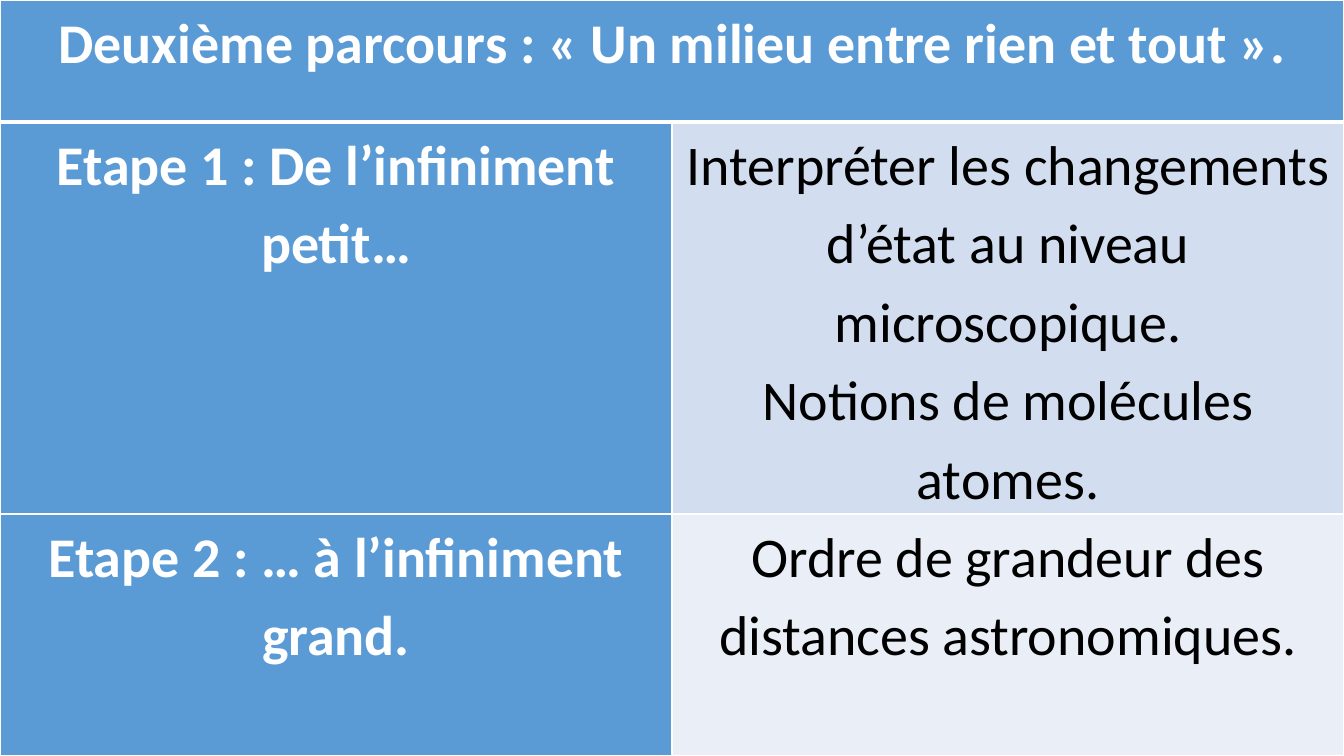
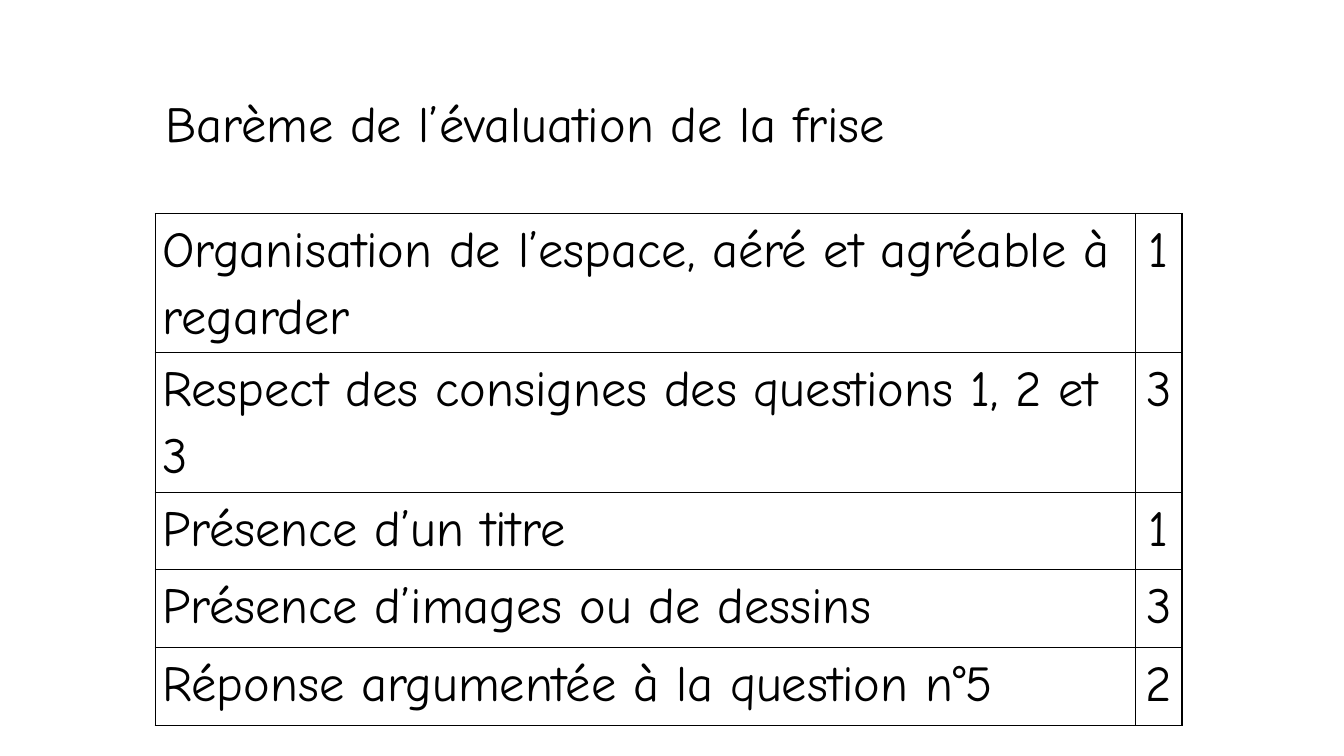
from dataclasses import dataclass

from pptx import Presentation, util as u
from pptx.dml.color import RGBColor
from pptx.enum import text
from pptx.oxml import parse_xml
from pptx.oxml.ns import nsdecls

WIDTH, HEIGHT = u.Inches(13.33), u.Inches(7.5)
TITLE_ONLY, BLANK = 5, 6
CENTER, LEFT = text.PP_ALIGN.CENTER, text.PP_ALIGN.LEFT


@dataclass(frozen=True)
class Theme:
    white: str = "FFFFFF"
    black: str = "000000"
    blue: str = "5B9BD5"
    pale: str = "D2DEEF"
    paler: str = "EAEFF7"
    course_font: str = "Calibri"
    course_size: int = 40
    scale_font: str = "Comic Neue"
    scale_size: int = 36
    leading: float = 1.15
    rule: int = 1
    heavy_rule: int = 3


T = Theme()


def share_box(left, top, width, height):
    """Turn shares of the slide into a box in EMU."""
    return (int(left * WIDTH), int(top * HEIGHT),
            int(width * WIDTH), int(height * HEIGHT))


def format_text(tf, font, size, color, bold=False, align=LEFT):
    for p in tf.paragraphs:
        p.alignment = align
        p.line_spacing = T.leading
        for r in p.runs:
            r.font.name, r.font.size, r.font.bold = font, u.Pt(size), bold
            r.font.color.rgb = RGBColor.from_string(color)


def add_grid(s, box, cols, rows):
    """Add an unbanded table whose columns and rows share out the box."""
    table = s.shapes.add_table(len(rows), len(cols), *box).table
    table.first_row = table.horz_banding = False
    for col, share in zip(table.columns, cols):
        col.width = int(box[2] * share / sum(cols))
    for row, share in zip(table.rows, rows):
        row.height = int(box[3] * share / sum(rows))
    return table


def style_cell(cell, line, fill=None, top=T.rule, bottom=T.rule):
    """Set margins, the four borders, then the fill."""
    cell.margin_left = cell.margin_right = u.Inches(0.07)
    cell.margin_top = cell.margin_bottom = 0
    tc_pr = cell._tc.get_or_add_tcPr()
    sides = {"L": T.rule, "R": T.rule, "T": top, "B": bottom}
    for side, points in sides.items():
        tc_pr.append(parse_xml(
            f'<a:ln{side} {nsdecls("a")} w="{u.Pt(points)}"><a:solidFill>'
            f'<a:srgbClr val="{line}"/></a:solidFill></a:ln{side}>'))
    if fill:
        cell.fill.solid()
        cell.fill.fore_color.rgb = RGBColor.from_string(fill)
    else:
        cell.fill.background()


def course_slide(prs, heading, steps):
    """Full-slide table: a merged heading over step and content columns."""
    s = prs.slides.add_slide(prs.slide_layouts[BLANK])
    table = add_grid(s, share_box(0, 0, 1, 1), (1, 1), (1.21, 3.89, 2.4))
    table.cell(0, 0).merge(table.cell(0, 1))
    fills = [(T.blue, T.blue), (T.blue, T.pale), (T.blue, T.paler)]
    for i, words in enumerate([(heading, ""), *steps]):
        for j, fill in enumerate(fills[i]):
            cell = table.cell(i, j)
            cell.text_frame.text = words[j]
            strong = fill == T.blue
            format_text(cell.text_frame, T.course_font, T.course_size,
                        T.white if strong else T.black, strong, CENTER)
            style_cell(cell, T.white, fill,
                       top=T.heavy_rule if i == 1 else T.rule,
                       bottom=T.heavy_rule if i == 0 else T.rule)


def scale_slide(prs, title, criteria):
    """Title above a ruled table of criteria and points."""
    s = prs.slides.add_slide(prs.slide_layouts[TITLE_ONLY])
    left = 0.1155

    # Title
    sp = s.shapes.title
    sp.left, sp.top, sp.width, sp.height = share_box(left, 0.103, 0.6, 0.1)
    tf = sp.text_frame
    tf.text = title
    tf.word_wrap = True
    tf.auto_size = text.MSO_AUTO_SIZE.NONE
    tf.vertical_anchor = text.MSO_ANCHOR.TOP
    format_text(tf, T.scale_font, T.scale_size, T.black)

    # Criteria: the first two take two lines each
    table = add_grid(s, share_box(left, 0.2825, 0.764, 0.677),
                     (9.72, 0.46), (1.38, 1.38, 0.77, 0.77, 0.77))
    for i, words in enumerate(criteria):
        for j, align in enumerate((LEFT, CENTER)):
            cell = table.cell(i, j)
            cell.text_frame.text = words[j]
            format_text(cell.text_frame, T.scale_font, T.scale_size,
                        T.black, align=align)
            style_cell(cell, T.black)


def main():
    prs = Presentation()
    prs.slide_width, prs.slide_height = WIDTH, HEIGHT
    course_slide(prs, "Deuxième parcours : « Un milieu entre rien et tout ».", [
        ("Etape 1 : De l’infiniment petit…",
         "Interpréter les changements d’état au niveau microscopique.\n"
         "Notions de molécules atomes."),
        ("Etape 2 : … à l’infiniment grand.",
         "Ordre de grandeur des distances astronomiques."),
    ])
    scale_slide(prs, "Barème de l’évaluation de la frise", [
        ("Organisation de l’espace, aéré et agréable à regarder", "1"),
        ("Respect des consignes des questions 1, 2 et 3", "3"),
        ("Présence d’un titre", "1"),
        ("Présence d’images ou de dessins", "3"),
        ("Réponse argumentée à la question n°5", "2"),
    ])
    prs.save("out.pptx")


if __name__ == "__main__":
    main()
